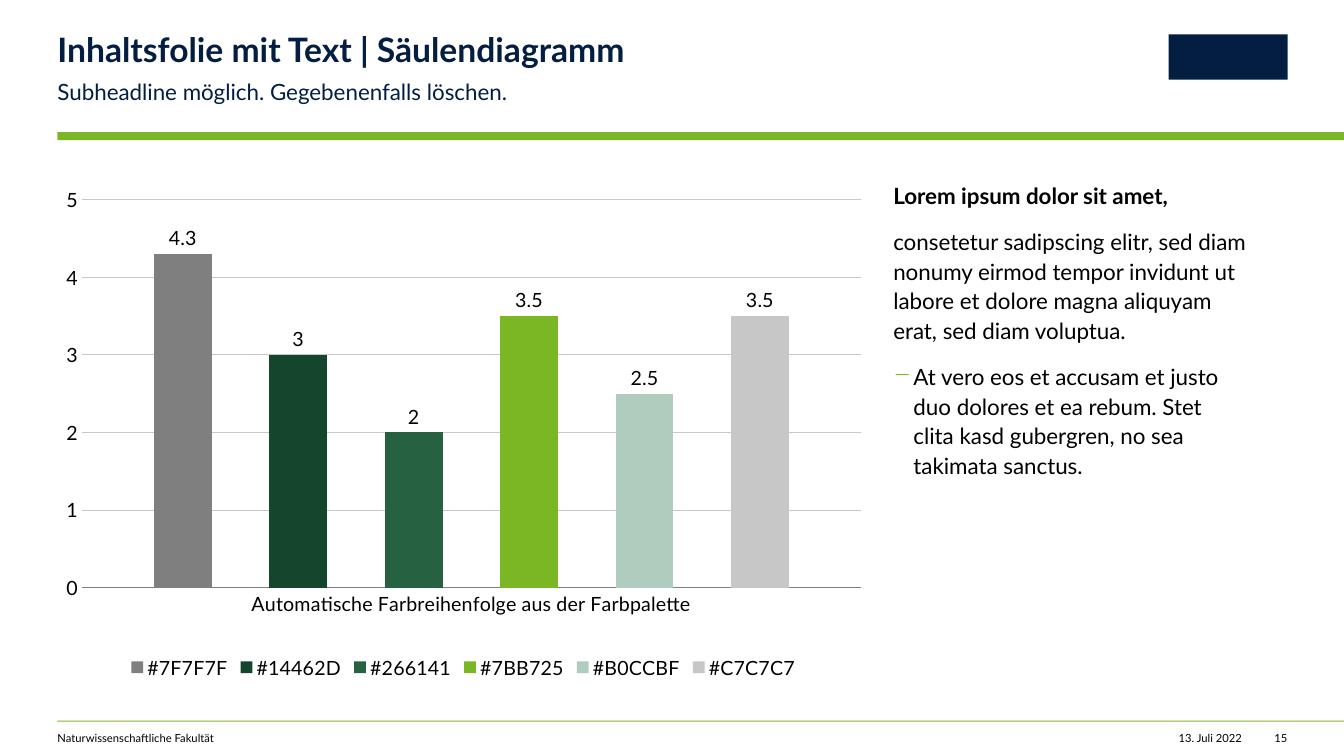
from lxml.etree import SubElement
from pptx import Presentation
from pptx.chart.data import CategoryChartData
from pptx.dml.color import RGBColor
from pptx.enum.chart import (XL_CHART_TYPE, XL_LABEL_POSITION,
                             XL_LEGEND_POSITION, XL_TICK_MARK)
from pptx.enum.shapes import MSO_SHAPE
from pptx.enum.text import PP_ALIGN
from pptx.oxml import parse_xml
from pptx.oxml.ns import nsdecls, qn
from pptx.util import Inches, Pt

FONT = "Lato"
NAVY = RGBColor(0x04, 0x1E, 0x42)
BLACK = RGBColor(0x00, 0x00, 0x00)
GRAY = RGBColor(0x7F, 0x7F, 0x7F)
FOREST = RGBColor(0x14, 0x46, 0x2D)
PINE = RGBColor(0x26, 0x61, 0x41)
GREEN = RGBColor(0x7B, 0xB7, 0x25)
MINT = RGBColor(0xB0, 0xCC, 0xBF)
SILVER = RGBColor(0xC7, 0xC7, 0xC7)

COLUMNS = [(GRAY, 4.3), (FOREST, 3), (PINE, 2),
           (GREEN, 3.5), (MINT, 2.5), (SILVER, 3.5)]
PAGE_WIDTH, PAGE_HEIGHT = 13.33, 7.5
MARGIN = 0.57
RIGHT_EDGE = 12.77


def add_block(page, left, top, width, height, color):
    block = page.shapes.add_shape(MSO_SHAPE.RECTANGLE, Inches(left), Inches(top),
                                  Inches(width), Inches(height))
    block.shadow.inherit = False
    block.fill.solid()
    block.fill.fore_color.rgb = color
    block.line.fill.background()


def add_text(page, left, top, width, height, *texts, size=16, color=BLACK, bold=False,
             align=PP_ALIGN.LEFT, spacing=1.0, after=0, inset_right=0, wrap=True):
    """Add a text box with one paragraph per text and return the paragraphs."""
    box = page.shapes.add_textbox(Inches(left), Inches(top), Inches(width), Inches(height))
    frame = box.text_frame
    frame.word_wrap = wrap
    frame.margin_left = frame.margin_top = frame.margin_bottom = 0
    frame.margin_right = Inches(inset_right)
    for index, text in enumerate(texts):
        para = frame.add_paragraph() if index else frame.paragraphs[0]
        para.alignment = align
        para.line_spacing = spacing
        para.space_after = Pt(after)
        span = para.add_run()
        span.text = text
        format_font(span.font, size, color)
        span.font.bold = bold
    return frame.paragraphs


def format_font(font, size=14, color=BLACK):
    font.name = FONT
    font.size = Pt(size)
    font.color.rgb = color


def add_dash(para, indent, color):
    """Give a paragraph a coloured dash as its bullet."""
    properties = para._p.get_or_add_pPr()
    properties.set("marL", str(Inches(indent)))
    properties.set("indent", str(-Inches(indent)))
    bullet_color = SubElement(properties, qn("a:buClr"))
    SubElement(bullet_color, qn("a:srgbClr")).set("val", str(color))
    SubElement(properties, qn("a:buChar")).set("char", "−")


def add_header(page, left, top, width):
    add_text(page, left, top, width, 0.36, "Inhaltsfolie mit Text | Säulendiagramm",
             size=24, color=NAVY, bold=True, spacing=0.9)
    add_text(page, left, top + 0.42, width, 0.27,
             "Subheadline möglich. Gegebenenfalls löschen.",
             color=NAVY, spacing=1.1, after=12, inset_right=0.39)
    # Plain block in the logo's place
    add_block(page, RIGHT_EDGE - 1.18, top + 0.01, 1.18, 0.45, NAVY)
    add_block(page, left, top + 0.98, PAGE_WIDTH - left, 0.08, GREEN)


def add_footer(page, left, top):
    add_block(page, left, top, PAGE_WIDTH - left, 0.01, GREEN)
    text_top = top + 0.11
    add_text(page, left, text_top, 5.98, 0.13, "Naturwissenschaftliche Fakultät", size=8)
    add_text(page, 11.58, text_top, 0.74, 0.13, "13. Juli 2022",
             size=8, align=PP_ALIGN.RIGHT, wrap=False)
    add_text(page, RIGHT_EDGE - 0.14, text_top, 0.14, 0.13, "15",
             size=8, align=PP_ALIGN.RIGHT, wrap=False)


def place_plot(chart, **fractions):
    """Fix the inner plot area to fractions of the chart."""
    entries = "".join(f'<c:{name} val="{value}"/>' for name, value in fractions.items())
    layout = parse_xml(
        f'<c:layout {nsdecls("c")}><c:manualLayout><c:layoutTarget val="inner"/>'
        f'<c:xMode val="edge"/><c:yMode val="edge"/>{entries}'
        '</c:manualLayout></c:layout>')
    plot_area = chart._chartSpace.chart.plotArea
    for old_layout in plot_area.findall(qn("c:layout")):
        plot_area.remove(old_layout)
    plot_area.insert(0, layout)


def add_column_chart(page, left, top, width, height):
    data = CategoryChartData()
    data.categories = ["Automatische Farbreihenfolge aus der Farbpalette"]
    for color, value in COLUMNS:
        data.add_series(f"#{color}", [value])
    chart = page.shapes.add_chart(XL_CHART_TYPE.COLUMN_CLUSTERED, Inches(left), Inches(top),
                                  Inches(width), Inches(height), data).chart
    chart.has_title = False
    format_font(chart.font)

    # Columns and their labels
    plot = chart.plots[0]
    plot.gap_width = 250
    plot.overlap = -100
    plot.vary_by_categories = False
    for series, (color, _) in zip(plot.series, COLUMNS):
        series.format.fill.solid()
        series.format.fill.fore_color.rgb = color
        labels = series.data_labels
        labels.show_value = True
        labels.position = XL_LABEL_POSITION.OUTSIDE_END
        format_font(labels.font)

    # Axes and gridlines
    for axis in (chart.category_axis, chart.value_axis):
        axis.major_tick_mark = axis.minor_tick_mark = XL_TICK_MARK.NONE
        format_font(axis.tick_labels.font)
    base_line = chart.category_axis.format.line
    base_line.color.rgb = GRAY
    base_line.width = Pt(0.5)
    values = chart.value_axis
    values.minimum_scale, values.maximum_scale, values.major_unit = 0, 5, 1
    values.format.line.fill.background()
    grid_line = values.major_gridlines.format.line
    grid_line.color.rgb = SILVER
    grid_line.width = Pt(0.5)

    # Legend and plot position
    chart.has_legend = True
    chart.legend.position = XL_LEGEND_POSITION.BOTTOM
    chart.legend.include_in_layout = False
    format_font(chart.legend.font)
    place_plot(chart, x=0.03, y=0.04, w=0.96, h=0.77)


def add_body(page, left, top, width, height):
    heading, _, point = add_text(
        page, left, top, width, height,
        "Lorem ipsum dolor sit amet,",
        "consetetur sadipscing elitr, sed diam nonumy eirmod tempor invidunt ut "
        "labore et dolore magna aliquyam erat, sed diam voluptua.",
        "At vero eos et accusam et justo duo dolores et ea rebum. "
        "Stet clita kasd gubergren, no sea takimata sanctus.",
        spacing=1.1, after=12, inset_right=0.39)
    heading.runs[0].font.bold = True
    add_dash(point, 0.2, GREEN)


def main():
    deck = Presentation()
    deck.slide_width = Inches(PAGE_WIDTH)
    deck.slide_height = Inches(PAGE_HEIGHT)
    page = deck.slides.add_slide(deck.slide_layouts[6])
    add_header(page, MARGIN, 0.33, 7.49)
    add_column_chart(page, MARGIN, 1.78, 8.05, 5)
    add_body(page, 8.86, 1.78, 3.91, 5)
    add_footer(page, MARGIN, 7.15)
    deck.save("out.pptx")


if __name__ == "__main__":
    main()
